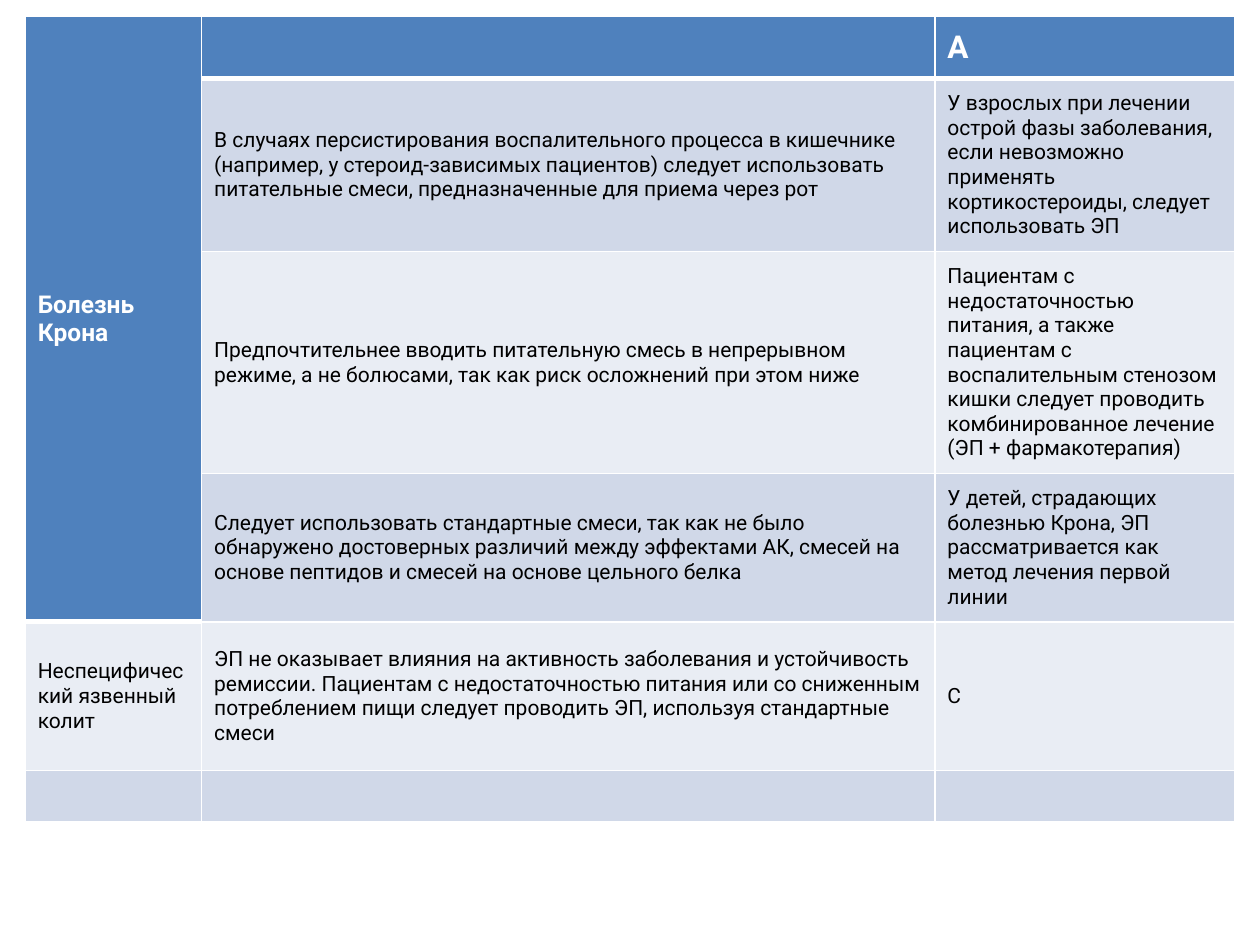
import pptx
import pptx.dml.color
import pptx.enum.text
import pptx.oxml
import pptx.oxml.ns
import pptx.util
from pptx.util import Inches

FONT = "Roboto"
WHITE, BLACK, HEADER = "FFFFFF", "000000", "4F81BD"
BANDS = ("E9EDF4", "D0D8E8")
COLUMN_WIDTHS = (1.4, 5.82, 2.38)
ROW_HEIGHTS = (0.48, 1.14, 1.52, 0.95, 1.18, 0.38)
CROHN_ROWS = 4
HEADER_SIZES = {0: 14, 2: 18}

ROWS = [
    ("Болезнь Крона", "", "А"),
    ("",
     "В случаях персистирования воспалительного процесса в кишечнике (например, "
     "у стероид-зависимых пациентов) следует использовать питательные смеси, "
     "предназначенные для приема через рот",
     "У взрослых при лечении острой фазы заболевания, если невозможно применять "
     "кортикостероиды, следует использовать ЭП"),
    ("",
     "Предпочтительнее вводить питательную смесь в непрерывном режиме, а не "
     "болюсами, так как риск осложнений при этом ниже",
     "Пациентам с недостаточностью питания, а также пациентам с воспалительным "
     "стенозом кишки следует проводить комбинированное лечение "
     "(ЭП + фармакотерапия)"),
    ("",
     "Следует использовать стандартные смеси, так как не было обнаружено "
     "достоверных различий между эффектами АК, смесей на основе пептидов и "
     "смесей на основе цельного белка",
     "У детей, страдающих болезнью Крона, ЭП рассматривается как метод лечения "
     "первой линии"),
    ("Неспецифический язвенный колит",
     "ЭП не оказывает влияния на активность заболевания и устойчивость ремиссии. "
     "Пациентам с недостаточностью питания или со сниженным потреблением пищи "
     "следует проводить ЭП, используя стандартные смеси",
     "C"),
    ("", "", ""),
]


def rgb(color):
    return pptx.dml.color.RGBColor.from_string(color)


def write_text(cell, text, size=12, color=BLACK, bold=False):
    cell.vertical_anchor = pptx.enum.text.MSO_ANCHOR.MIDDLE
    cell.margin_left = cell.margin_right = Inches(0.1)
    cell.margin_top = cell.margin_bottom = Inches(0.1)
    span = cell.text_frame.paragraphs[0].add_run()
    span.text = text
    span.font.name = FONT
    span.font.size = pptx.util.Pt(size)
    span.font.bold = bold
    span.font.color.rgb = rgb(color)


def set_borders(cell, top=1, bottom=1):
    """Draw white cell borders; widths are in points."""
    properties = cell._tc.get_or_add_tcPr()
    widths = {"L": 1, "R": 1, "T": top, "B": bottom}
    for index, (side, width) in enumerate(widths.items()):
        line = pptx.oxml.parse_xml(
            f'<a:ln{side} {pptx.oxml.ns.nsdecls("a")} w="{pptx.util.Pt(width)}">'
            f'<a:solidFill><a:srgbClr val="{WHITE}"/></a:solidFill></a:ln{side}>')
        properties.insert(index, line)


def format_cell(cell, text, row, column):
    header_rows = CROHN_ROWS if column == 0 else 1
    is_header = row < header_rows
    cell.fill.solid()
    cell.fill.fore_color.rgb = rgb(HEADER if is_header else BANDS[row % 2])
    set_borders(cell, top=3 if row == header_rows else 1,
                bottom=3 if is_header else 1)
    if text and is_header:
        write_text(cell, text, size=HEADER_SIZES[column], color=WHITE, bold=True)
    elif text:
        write_text(cell, text)


def add_recommendations(slide):
    frame = slide.shapes.add_table(
        len(ROWS), len(COLUMN_WIDTHS), Inches(0.2), Inches(0.13),
        Inches(sum(COLUMN_WIDTHS)), Inches(sum(ROW_HEIGHTS)))
    table = frame.table
    for column, width in zip(table.columns, COLUMN_WIDTHS):
        column.width = Inches(width)
    for row, height in zip(table.rows, ROW_HEIGHTS):
        row.height = Inches(height)
    table.cell(0, 0).merge(table.cell(CROHN_ROWS - 1, 0))
    for row, texts in enumerate(ROWS):
        for column, text in enumerate(texts):
            cell = table.cell(row, column)
            if not cell.is_spanned:
                format_cell(cell, text, row, column)


def main():
    deck = pptx.Presentation()
    deck.slide_width, deck.slide_height = Inches(10), Inches(7.5)
    slide = deck.slides.add_slide(deck.slide_layouts.get_by_name("Blank"))
    add_recommendations(slide)
    deck.save("out.pptx")


if __name__ == "__main__":
    main()
